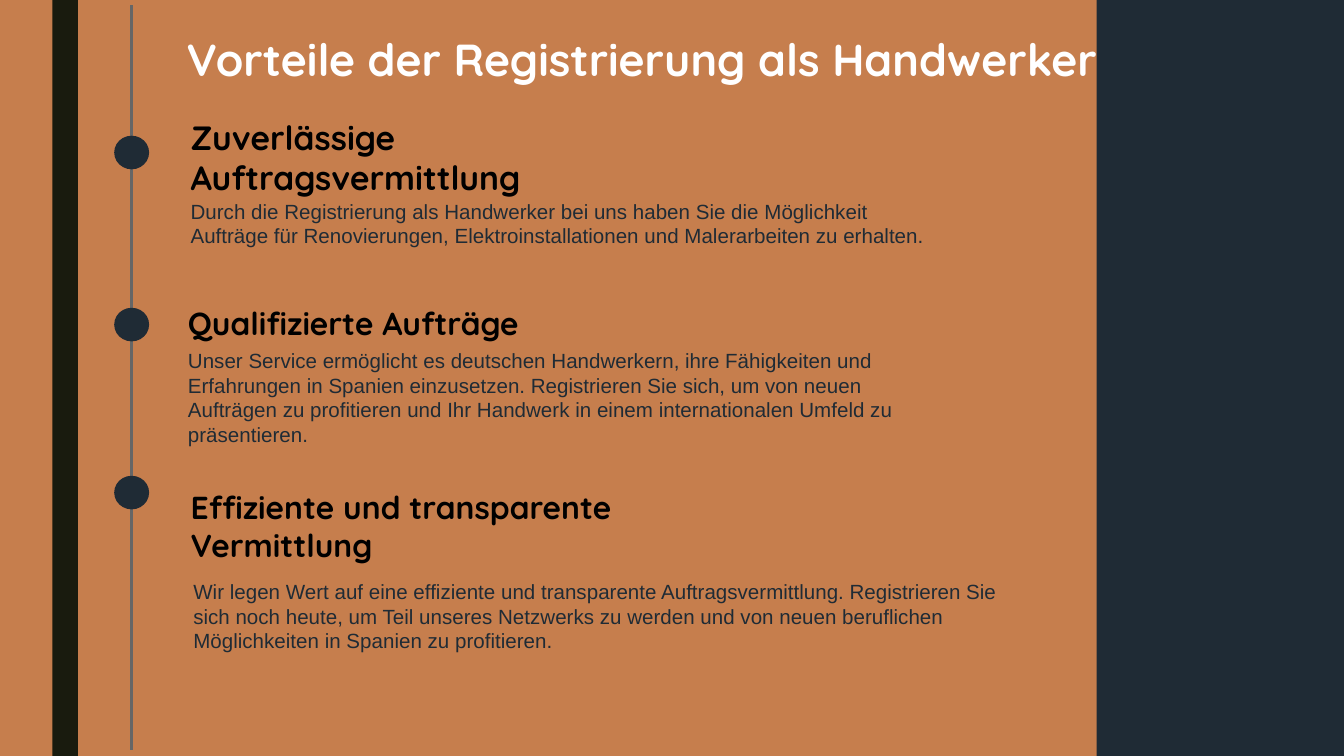
from lxml import etree
from pptx import Presentation
from pptx.dml.color import RGBColor
from pptx.enum import shapes, text
from pptx.oxml.ns import qn
from pptx.util import Inches, Pt

COPPER = RGBColor(0xC6, 0x7E, 0x4D)
NAVY = RGBColor(0x1F, 0x2B, 0x35)
DARK = RGBColor(0x19, 0x1B, 0x0E)
GREY = RGBColor(0x66, 0x66, 0x66)
WHITE = RGBColor(0xFF, 0xFF, 0xFF)
BLACK = RGBColor(0, 0, 0)

WIDTH = 10
HEIGHT = WIDTH * 9 / 16

BENEFITS = [
    ((1.32, 0.77, 3.43, 0.5), 18, "Zuverlässige Auftragsvermittlung",
     (1.32, 1.43, 5.73, 0.47),
     "Durch die Registrierung als Handwerker bei uns haben Sie die Möglichkeit "
     "Aufträge für Renovierungen, Elektroinstallationen und Malerarbeiten zu erhalten."),
    ((1.3, 2.16, 3.43, 0.77), 17, "Qualifizierte Aufträge",
     (1.3, 2.54, 5.55, 0.84),
     "Unser Service ermöglicht es deutschen Handwerkern, ihre Fähigkeiten und "
     "Erfahrungen in Spanien einzusetzen. Registrieren Sie sich, um von neuen "
     "Aufträgen zu profitieren und Ihr Handwerk in einem internationalen Umfeld "
     "zu präsentieren."),
    ((1.32, 3.53, 3.43, 0.49), 17, "Effiziente und transparente Vermittlung",
     (1.34, 4.26, 6.33, 0.66),
     "Wir legen Wert auf eine effiziente und transparente Auftragsvermittlung. "
     "Registrieren Sie sich noch heute, um Teil unseres Netzwerks zu werden und "
     "von neuen beruflichen Möglichkeiten in Spanien zu profitieren."),
]


def add_filled(s, kind, box, color):
    """Add a borderless filled preset shape."""
    sp = s.shapes.add_shape(kind, *map(Inches, box))
    sp.shadow.inherit = False
    sp.fill.solid()
    sp.fill.fore_color.rgb = color
    sp.line.fill.background()


def add_text(s, box, words, size, font, color, bold=False, inset=0.1):
    """Add a wrapped text box and return its paragraph."""
    tf = s.shapes.add_textbox(*map(Inches, box)).text_frame
    tf.word_wrap = True
    tf.vertical_anchor = text.MSO_ANCHOR.TOP
    tf.margin_left = tf.margin_right = Inches(0.1)
    tf.margin_top = tf.margin_bottom = Inches(inset)
    p = tf.paragraphs[0]
    r = p.add_run()
    r.text = words
    r.font.size = Pt(size)
    r.font.name = font
    r.font.bold = bold
    r.font.color.rgb = color
    return p


def add_bands(s):
    """Draw the vertical bands on the left and right."""
    rect = shapes.MSO_SHAPE.RECTANGLE
    add_filled(s, rect, (0.39, 0, 0.19, HEIGHT), DARK)
    add_filled(s, rect, (8.16, 0, 1.89, HEIGHT), NAVY)


def add_timeline(s, x, top, bottom, dot_tops):
    """Draw the vertical line with a dot for each benefit."""
    line = s.shapes.add_connector(shapes.MSO_CONNECTOR.STRAIGHT,
                                  *map(Inches, (x, top, x, bottom)))
    line.line.color.rgb = GREY
    line.line.width = Pt(1.5)
    etree.SubElement(line._element.spPr, qn("a:effectLst"))
    for y in dot_tops:
        add_filled(s, shapes.MSO_SHAPE.OVAL, (x - 0.13, y, 0.26, 0.25), NAVY)


def add_benefit(s, head_box, head_size, head, body_box, body):
    """Add one benefit with its heading and description."""
    add_text(s, head_box, head, head_size, "Quicksand", BLACK, bold=True)
    add_text(s, body_box, body, 11, "Arial", NAVY, inset=0.05)


def main():
    """Build and save the slide."""
    prs = Presentation()
    prs.slide_width, prs.slide_height = Inches(WIDTH), Inches(HEIGHT)
    s = prs.slides.add_slide(prs.slide_layouts[6])
    s.background.fill.solid()
    s.background.fill.fore_color.rgb = COPPER
    add_bands(s)
    add_timeline(s, 0.98, 0.04, 5.58, (1.01, 2.29, 3.54))
    title = add_text(s, (1.29, 0.07, 7.89, 0.9),
                     "Vorteile der Registrierung als Handwerker",
                     24, "Quicksand", WHITE, bold=True)
    title.line_spacing = 1.17
    for benefit in BENEFITS:
        add_benefit(s, *benefit)
    prs.save("out.pptx")


if __name__ == "__main__":
    main()
